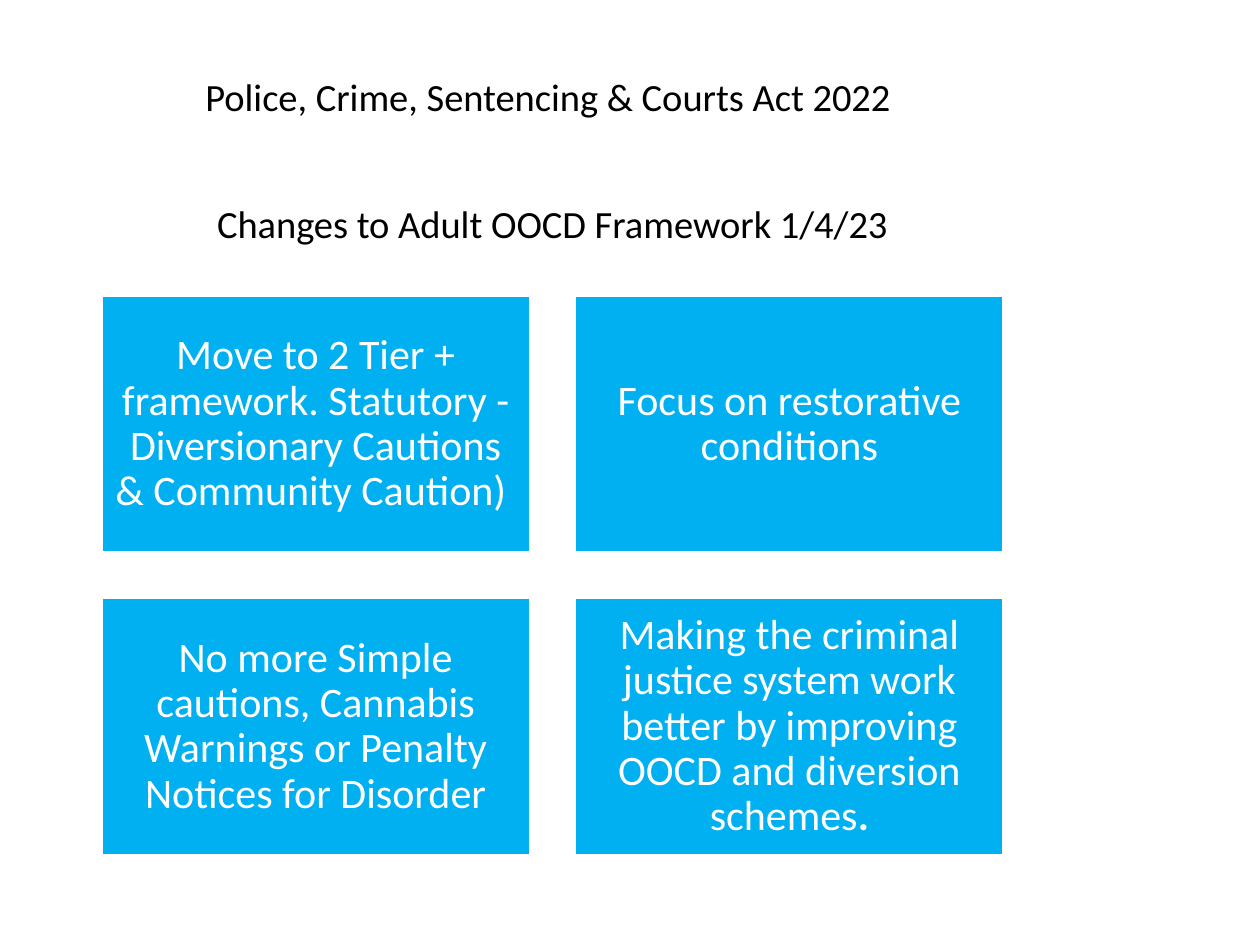
from itertools import product

from pptx import Presentation
from pptx.dml.color import RGBColor
from pptx.enum.shapes import MSO_SHAPE as Shape
from pptx.enum.text import MSO_ANCHOR as Anchor, MSO_AUTO_SIZE as Fit, PP_ALIGN as Align
from pptx.util import Inches, Pt

BLACK = RGBColor(0x00, 0x00, 0x00)
WHITE = RGBColor(0xFF, 0xFF, 0xFF)
BLUE = RGBColor(0x00, 0xB0, 0xF0)

HEAD = ["Police, Crime, Sentencing & Courts Act 2022 ", "Changes to Adult OOCD Framework 1/4/23"]
CARDS = [
    [("Move to 2 Tier + framework. Statutory - Diversionary Cautions & Community Caution) ", False)],
    [("Focus on restorative conditions", False)],
    [("No more Simple cautions, Cannabis Warnings or Penalty Notices for Disorder", False)],
    [("Making the criminal justice system work better by improving OOCD and diversion schemes", False),
     (".", True)],
]
LEFT, TOP, WIDE, HIGH, GAP = 0.8, 2.34, 3.41, 2.05, 0.35


class Deck:
    """Holds the text style and the current slide."""

    def __init__(self, slide, face="Calibri"):
        self.slide = slide
        self.face = face

    def add_text(self, para, text, size, color, bold=False):
        para.alignment = Align.CENTER
        run = para.add_run()
        run.text = text
        font = run.font
        font.name, font.size, font.bold = self.face, Pt(size), bold
        font.color.rgb = color

    def title(self, lines, left, top, width, height):
        shape = self.slide.shapes.title
        shape.left, shape.top = Inches(left), Inches(top)
        shape.width, shape.height = Inches(width), Inches(height)
        frame = shape.text_frame
        frame.auto_size = Fit.NONE
        frame.vertical_anchor = Anchor.MIDDLE
        for i, line in enumerate(lines):
            para = frame.add_paragraph() if i else frame.paragraphs[0]
            para.space_before = Pt(46 if i else 0)
            self.add_text(para, line, 22, BLACK)

    def card(self, runs, left, top):
        shape = self.slide.shapes.add_shape(
            Shape.RECTANGLE, Inches(left), Inches(top), Inches(WIDE), Inches(HIGH))
        shape.shadow.inherit = False
        shape.fill.solid()
        shape.fill.fore_color.rgb = BLUE
        shape.line.color.rgb = WHITE
        shape.line.width = Pt(2)
        frame = shape.text_frame
        frame.word_wrap = True
        frame.vertical_anchor = Anchor.MIDDLE
        frame.margin_left = frame.margin_right = Inches(0.1)
        frame.margin_top = frame.margin_bottom = Inches(0.1)
        para = frame.paragraphs[0]
        para.line_spacing = 0.9
        for text, bold in runs:
            self.add_text(para, text, 24, WHITE, bold)


def main():
    prs = Presentation()
    prs.slide_width, prs.slide_height = Inches(10), Inches(7.5)
    deck = Deck(prs.slides.add_slide(prs.slide_layouts[5]))
    deck.title(HEAD, 0.53, 0.5, 7.71, 1.53)
    for runs, (row, col) in zip(CARDS, product(range(2), repeat=2)):
        deck.card(runs, LEFT + col * (WIDE + GAP), TOP + row * (HIGH + GAP))
    prs.save("out.pptx")


if __name__ == "__main__":
    main()
